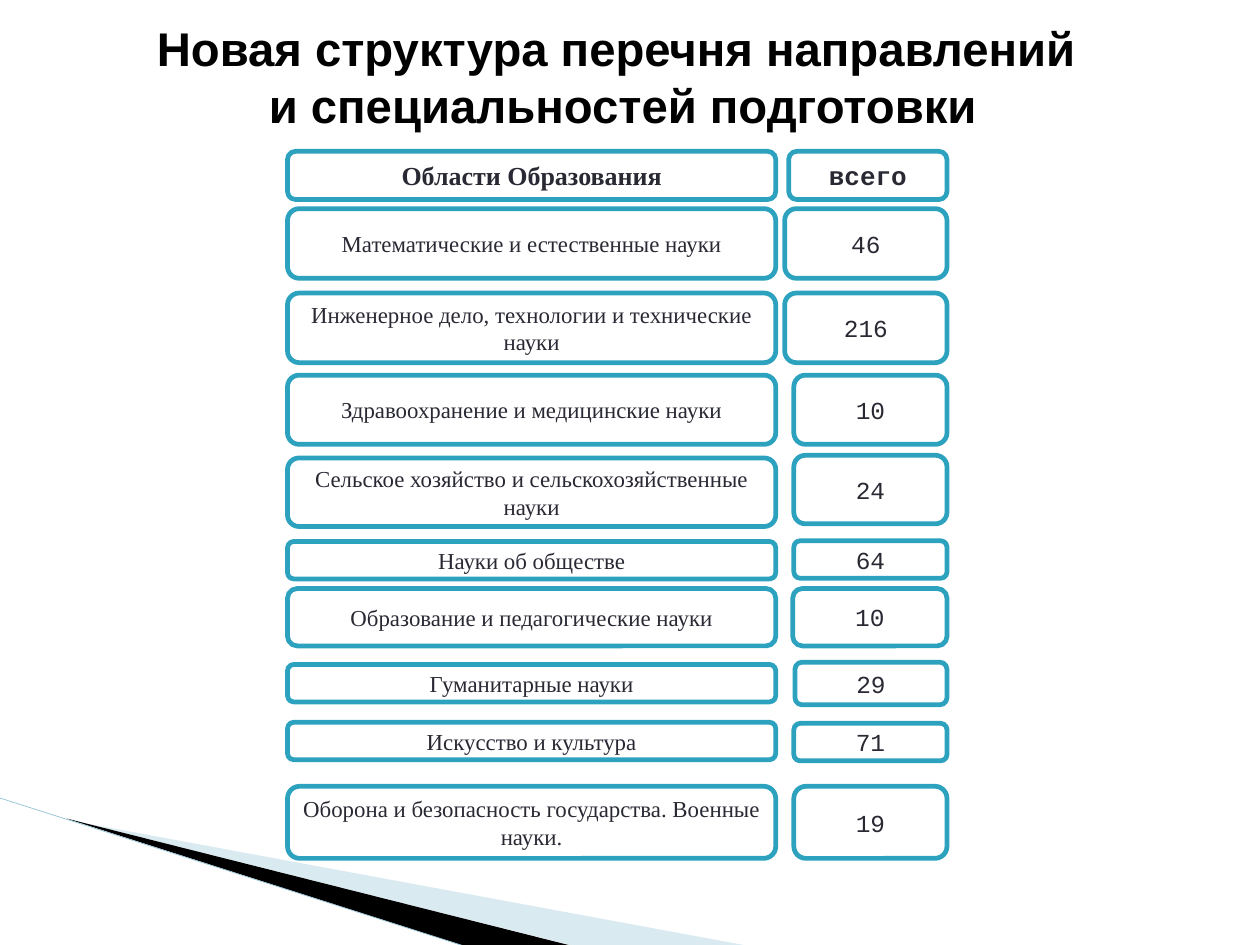
"""Build the slide listing education areas and their number of programmes."""
from dataclasses import dataclass

from lxml.etree import SubElement
from pptx import Presentation
from pptx.dml.color import RGBColor
from pptx.enum.shapes import MSO_CONNECTOR, MSO_SHAPE
from pptx.enum.text import MSO_ANCHOR, PP_ALIGN
from pptx.oxml.ns import qn
from pptx.util import Cm, Pt


@dataclass(frozen=True)
class Theme:
    ink: str = "292934"
    frame: str = "2DA2BF"
    paper: str = "FFFFFF"
    black: str = "000000"
    pale_wedge: str = "A0CBDC"
    edge: str = "97C5D8"
    title_font: str = "Arial"
    area_font: str = "Times New Roman"
    total_font: str = "Courier New"
    title_size: int = 60
    header_size: int = 33
    area_size: int = 29
    total_size: int = 31
    frame_width: int = 6
    edge_width: float = 0.95


theme = Theme()


def write(holder, text, font_name, size, color, bold=False):
    frame = holder.text_frame
    frame.word_wrap = True
    frame.vertical_anchor = MSO_ANCHOR.MIDDLE
    paragraph = frame.paragraphs[0]
    paragraph.text = text
    paragraph.alignment = PP_ALIGN.CENTER
    for run in paragraph.runs:
        run.font.name = font_name
        run.font.size = Pt(size)
        run.font.bold = bold
        run.font.color.rgb = RGBColor.from_string(color)


prs = Presentation()
prs.slide_width, prs.slide_height = Cm(56.44), Cm(42.34)
slide = prs.slides.add_slide(prs.slide_layouts[6])
shapes = slide.shapes

wedges = [
    (theme.pale_wedge, 40, [(3.07, 36.75), (33.58, 42.39), (25.73, 42.39), (3.07, 36.7)]),
    (theme.black, 100, [(3, 36.68), (25.78, 42.42), (20.98, 42.44), (3.05, 36.7)]),
]
for color, opacity, corners in wedges:
    start, *others = [(Cm(x), Cm(y)) for x, y in corners]
    outline = shapes.build_freeform(*start)
    outline.add_line_segments(others)
    wedge = outline.convert_to_shape()
    wedge.shadow.inherit = False
    wedge.line.fill.background()
    wedge.fill.solid()
    wedge.fill.fore_color.rgb = RGBColor.from_string(color)
    if opacity < 100:
        tint = wedge.element.spPr.find(qn("a:solidFill")).find(qn("a:srgbClr"))
        SubElement(tint, qn("a:alpha")).set("val", str(opacity * 1000))

edge = shapes.add_connector(
    MSO_CONNECTOR.STRAIGHT, Cm(-0.05), Cm(35.74), Cm(20.96), Cm(42.44))
edge.line.color.rgb = RGBColor.from_string(theme.edge)
edge.line.width = Pt(theme.edge_width)
SubElement(edge.element.spPr, qn("a:effectLst"))

title = shapes.add_textbox(0, Cm(0.38), Cm(55.8), Cm(6.07))
title.text_frame.margin_left = title.text_frame.margin_right = Cm(0.56)
title.text_frame.margin_top = title.text_frame.margin_bottom = Cm(0.28)
write(title, "Новая структура перечня направлений \vи специальностей подготовки",
      theme.title_font, theme.title_size, theme.black, bold=True)

area_left, area_width, right_edge = 12.88, 21.87, 42.42

# area, top, height, total, total left, total top, total height
rows = [
    ("Области Образования", 6.78, 2.16, "всего", 35.33, 6.78, 2.16),
    ("Математические и естественные науки", 9.35, 3.12, "46", 35.15, 9.35, 3.12),
    ("Инженерное дело, технологии и технические науки", 13.13, 3.12,
     "216", 35.15, 13.13, 3.12),
    ("Здравоохранение и медицинские науки", 16.81, 3.1, "10", 35.56, 16.81, 3.1),
    ("Сельское хозяйство и сельскохозяйственные науки", 20.52, 3.07,
     "24", 35.56, 20.4, 3.07),
    ("Науки об обществе", 24.26, 1.68, "64", 35.56, 24.23, 1.68),
    ("Образование и педагогические науки", 26.37, 2.57, "10", 35.51, 26.37, 2.57),
    ("Гуманитарные науки", 29.77, 1.68, "29", 35.61, 29.67, 1.91),
    ("Искусство и культура", 32.36, 1.68, "71", 35.56, 32.41, 1.68),
    ("Оборона и безопасность государства. Военные науки.", 35.23, 3.23,
     "19", 35.56, 35.23, 3.23),
]
for number, (area, top, height, total, total_left, total_top, total_height) in enumerate(rows):
    is_header = number == 0
    cells = [
        (area, area_left, top, area_width, height, theme.area_font, theme.area_size),
        (total, total_left, total_top, right_edge - total_left, total_height,
         theme.total_font, theme.total_size),
    ]
    for text, x, y, width, depth, font_name, size in cells:
        cell = shapes.add_shape(
            MSO_SHAPE.ROUNDED_RECTANGLE, Cm(x), Cm(y), Cm(width), Cm(depth))
        cell.shadow.inherit = False
        cell.fill.solid()
        cell.fill.fore_color.rgb = RGBColor.from_string(theme.paper)
        cell.line.color.rgb = RGBColor.from_string(theme.frame)
        cell.line.width = Pt(theme.frame_width)
        write(cell, text, font_name, theme.header_size if is_header else size,
              theme.ink, bold=is_header)

prs.save("out.pptx")
